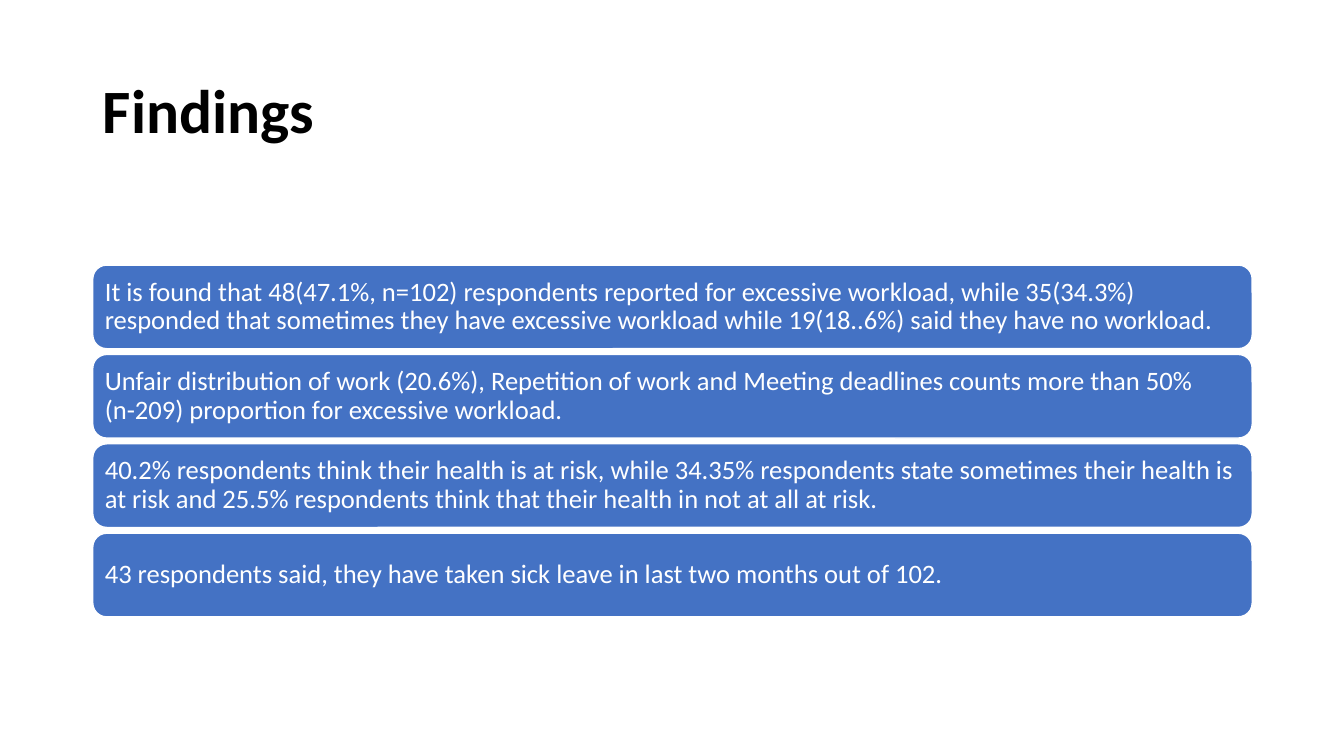
from pptx import Presentation
from pptx.dml.color import RGBColor
from pptx.enum.shapes import MSO_SHAPE as Shape
from pptx.enum.text import MSO_ANCHOR as Anchor, PP_ALIGN as Align
from pptx.util import Inches, Pt

TITLE = "Findings"
FINDINGS = [
    "It is found that 48(47.1%, n=102) respondents reported for excessive workload, "
    "while 35(34.3%) responded that sometimes they have excessive workload "
    "while 19(18..6%) said they have no workload.",
    "Unfair distribution of work (20.6%), Repetition of work and Meeting deadlines "
    "counts more than 50%(n-209) proportion for excessive workload.",
    "40.2% respondents think their health is at risk, while 34.35% respondents state "
    "sometimes their health is at risk and 25.5% respondents think that their health "
    "in not at all at risk.",
    "43 respondents said, they have taken sick leave in last two months out of 102.",
]
COLORS = {"title": "000000", "bar": "4472C4", "light": "FFFFFF"}
FONT = "Calibri"

# Layout in inches
LEFT, WIDTH = 0.92, 11.5
FIRST_TOP, LAST_TOP, BAR_HEIGHT = 2.63, 5.29, 0.83
PITCH = (LAST_TOP - FIRST_TOP) / (len(FINDINGS) - 1)
INSET = 0.08


def rgb(name):
    return RGBColor.from_string(COLORS[name])


def write(frame, text, size, color, bold=False):
    frame.word_wrap = True
    frame.vertical_anchor = Anchor.MIDDLE
    paragraph = frame.paragraphs[0]
    paragraph.alignment = Align.LEFT
    paragraph.line_spacing = 0.9
    run = paragraph.add_run()
    run.text = text
    run.font.name = FONT
    run.font.size = Pt(size)
    run.font.bold = bold
    run.font.color.rgb = rgb(color)


def add_finding(slide, top, text):
    bar = slide.shapes.add_shape(Shape.ROUNDED_RECTANGLE, Inches(LEFT), Inches(top),
                                 Inches(WIDTH), Inches(BAR_HEIGHT))
    bar.shadow.inherit = False
    bar.fill.solid()
    bar.fill.fore_color.rgb = rgb("bar")
    bar.line.color.rgb = rgb("light")
    bar.line.width = Pt(1)
    frame = bar.text_frame
    frame.margin_left = frame.margin_right = Inches(INSET)
    frame.margin_top = frame.margin_bottom = Inches(INSET)
    write(frame, text, size=19, color="light")


def main():
    deck = Presentation()
    deck.slide_width, deck.slide_height = Inches(13.33), Inches(7.5)
    slide = deck.slides.add_slide(deck.slide_layouts[5])

    # Title
    title = slide.shapes.title
    title.left, title.top = Inches(LEFT), Inches(0.4)
    title.width, title.height = Inches(WIDTH), Inches(1.45)
    write(title.text_frame, TITLE, size=44, color="title", bold=True)

    # Stacked findings
    for row, finding in enumerate(FINDINGS):
        add_finding(slide, FIRST_TOP + row * PITCH, finding)

    deck.save("out.pptx")


if __name__ == "__main__":
    main()
